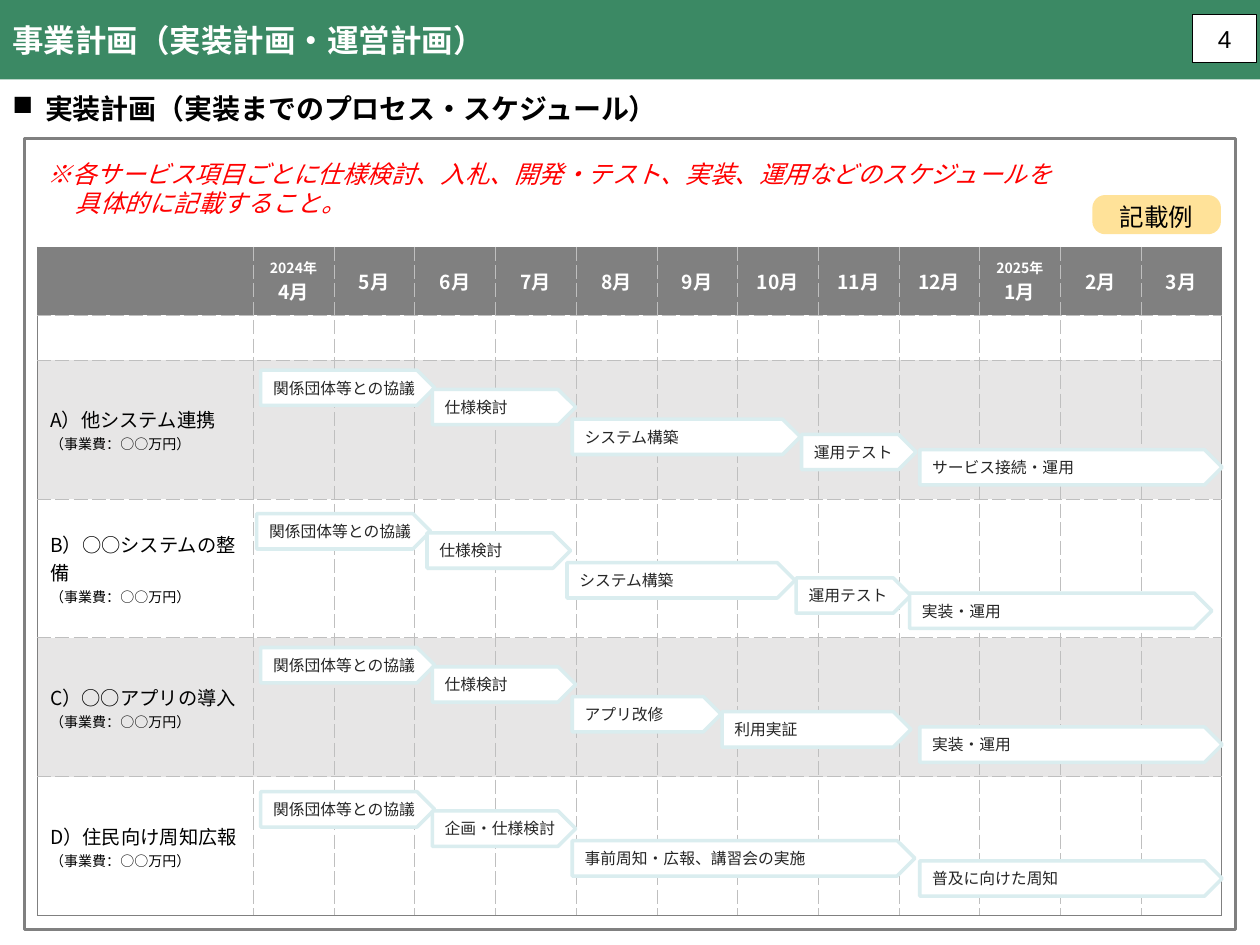
import pptx
import pptx.util
import pptx.dml.color
import pptx.enum.shapes
import pptx.enum.text
import pptx.oxml
import pptx.oxml.ns

Pt = pptx.util.Pt
SHAPE = pptx.enum.shapes.MSO_SHAPE
ALIGN = pptx.enum.text.PP_ALIGN
MIDDLE = pptx.enum.text.MSO_ANCHOR.MIDDLE
FONT = "Noto Sans CJK JP"
NS = pptx.oxml.ns.nsdecls("a")

TITLE = "事業計画（実装計画・運営計画）"
HEADING = "実装計画（実装までのプロセス・スケジュール）"
NOTE = ("※各サービス項目ごとに仕様検討、入札、開発・テスト、実装、運用などのスケジュールを"
        "\v具体的に記載すること。")
YEARS = {4: "2024年", 1: "2025年"}
MONTHS = [4, 5, 6, 7, 8, 9, 10, 11, 12, 1, 2, 3]
COST = "（事業費：○○万円）"
SERVICES = ["A）他システム連携", "B）○○システムの整備", "C）○○アプリの導入", "D）住民向け周知広報"]
STEPS = [0, 11, 28, 36.7, 45.4]
LANES = [
    (211.5, STEPS, [("関係団体等との協議", 149, 99.4), ("仕様検討", 247, 82),
                    ("システム構築", 327, 130.3), ("運用テスト", 458, 65.5),
                    ("サービス接続・運用", 525.6, 172.8)]),
    (293.5, STEPS, [("関係団体等との協議", 146.7, 99.4), ("仕様検討", 244, 82),
                    ("システム構築", 324, 130.3), ("運用テスト", 455, 65.5),
                    ("実装・運用", 519.8, 172.8)]),
    (370, STEPS, [("関係団体等との協議", 149, 99.4), ("仕様検討", 247, 82),
                  ("アプリ改修", 327, 85), ("利用実証", 412.6, 108),
                  ("実装・運用", 525.6, 172.8)]),
    (452.4, [0, 11, 28, 39.5], [("関係団体等との協議", 149, 99.4), ("企画・仕様検討", 247, 82),
                                ("事前周知・広報、講習会の実施", 327, 195.8),
                                ("普及に向けた周知", 525.6, 172.8)]),
]
LEFT, TOP, WIDTH = 21.4, 141.3, 676.8
LABEL_W = 123.3
ROW_H = [38.6, 25.7] + [79.4] * len(SERVICES)
BAR_H = 20.2
EDGE = ("808080", 0.75, "solid")
GRID = ("BFBFBF", 0.25, "sysDash")


def rgb(value):
    return pptx.dml.color.RGBColor.from_string(value)


def style(p, text, size, color="000000", bold=False, italic=False, align=ALIGN.LEFT, name=FONT):
    p.text = text
    p.alignment = align
    f = p.font
    f.size, f.bold, f.italic, f.name = Pt(size), bold, italic, name
    f.color.rgb = rgb(color)
    f._rPr.append(pptx.oxml.parse_xml(f'<a:ea {NS} typeface="{name}"/>'))


def add_box(s, kind, at, fill=None, line=None):
    sp = s.shapes.add_shape(kind, *map(Pt, at))
    sp.shadow.inherit = False
    if fill:
        sp.fill.solid()
        sp.fill.fore_color.rgb = rgb(fill)
    else:
        sp.fill.background()
    if line:
        sp.line.color.rgb = rgb(line[0])
        sp.line.width = Pt(line[1])
    else:
        sp.line.fill.background()
    sp.text_frame.vertical_anchor = MIDDLE
    return sp


def add_text(s, at):
    tf = s.shapes.add_textbox(*map(Pt, at)).text_frame
    tf.word_wrap = True
    return tf


def hang(p, indent):
    pPr = p._p.get_or_add_pPr()
    pPr.set("marL", str(Pt(indent)))
    pPr.set("indent", str(-Pt(indent)))
    return pPr


def set_borders(cell, sides):
    tcPr = cell._tc.get_or_add_tcPr()
    for side, (color, width, dash) in sides.items():
        tcPr.append(pptx.oxml.parse_xml(
            f'<a:ln{side} {NS} w="{Pt(width)}"><a:solidFill><a:srgbClr val="{color}"/>'
            f'</a:solidFill><a:prstDash val="{dash}"/></a:ln{side}>'))


def cell_lines(row, col):
    if row == 0 and col:
        month = MONTHS[col - 1]
        year = [(YEARS[month], 8)] if month in YEARS else []
        return year + [(f"{month}月", 11)]
    if row > 1 and col == 0:
        return [(SERVICES[row - 2], 11), (COST, 8)]
    return [("", 8)]


def add_schedule(s):
    rows, cols = len(ROW_H), len(MONTHS) + 1
    tbl = s.shapes.add_table(rows, cols, Pt(LEFT), Pt(TOP), Pt(WIDTH), Pt(sum(ROW_H))).table
    tbl.first_row = tbl.horz_banding = False
    for c, col in enumerate(tbl.columns):
        col.width = Pt((WIDTH - LABEL_W) / len(MONTHS) if c else LABEL_W)
    for r, height in enumerate(ROW_H):
        tbl.rows[r].height = Pt(height)
        fill = "808080" if r == 0 else "FFFFFF" if r % 2 else "E7E6E6"
        for c in range(cols):
            cell = tbl.cell(r, c)
            set_borders(cell, {"L": GRID if c else EDGE,
                               "R": EDGE if c == cols - 1 else GRID,
                               "T": GRID if r else EDGE,
                               "B": EDGE if r == rows - 1 else GRID})
            cell.fill.solid()
            cell.fill.fore_color.rgb = rgb(fill)
            cell.vertical_anchor = MIDDLE
            tf = cell.text_frame
            for i, (text, size) in enumerate(cell_lines(r, c)):
                p = tf.add_paragraph() if i else tf.paragraphs[0]
                style(p, text, size, "000000" if r else "FFFFFF", bold=r == 0,
                      align=ALIGN.LEFT if r else ALIGN.CENTER)


def add_bars(s):
    for top, steps, tasks in LANES:
        for step, (text, left, width) in zip(steps, tasks):
            sp = add_box(s, SHAPE.PENTAGON, (left, top + step, width, BAR_H), "FFFFFF", ("DAEDEF", 2))
            tf = sp.text_frame
            tf.word_wrap = False
            tf.margin_left = tf.margin_right = Pt(7.2)
            tf.margin_top = tf.margin_bottom = Pt(1.4)
            style(tf.paragraphs[0], text, 9, "262626")


def main():
    prs = pptx.Presentation()
    prs.slide_width, prs.slide_height = Pt(720), Pt(540)
    s = prs.slides.add_slide(prs.slide_layouts[6])

    sp = add_box(s, SHAPE.RECTANGLE, (0, 0, 720, 45.4), "3B8964")
    style(sp.text_frame.paragraphs[0], TITLE, 18, "FFFFFF", bold=True)

    p = add_text(s, (0, 49, 587, 26.6)).paragraphs[0]
    style(p, HEADING, 16, bold=True)
    p.space_before = Pt(1)
    hang(p, 18.7).find(pptx.oxml.ns.qn("a:defRPr")).addprevious(
        pptx.oxml.parse_xml(f'<a:buChar {NS} char="■"/>'))

    add_schedule(s)
    add_bars(s)

    sp = add_box(s, SHAPE.RECTANGLE, (681.6, 8.4, 36.6, 27.2), "FFFFFF", ("000000", 0.75))
    style(sp.text_frame.paragraphs[0], "4", 14, align=ALIGN.CENTER, name="Arial")

    p = add_text(s, (20.2, 87.1, 686, 41)).paragraphs[0]
    style(p, NOTE, 14, "FF0000", italic=True)
    hang(p, 16)

    sp = add_box(s, SHAPE.ROUNDED_RECTANGLE, (624.2, 111.5, 73.5, 22.4), "FFE299")
    sp.adjustments[0] = 0.33
    p = sp.text_frame.paragraphs[0]
    style(p, "記載例", 14, align=ALIGN.CENTER)
    p.line_spacing = Pt(19)

    add_box(s, SHAPE.RECTANGLE, (14.2, 79.2, 692, 452), line=("808080", 1.5))
    prs.save("out.pptx")


if __name__ == "__main__":
    main()
